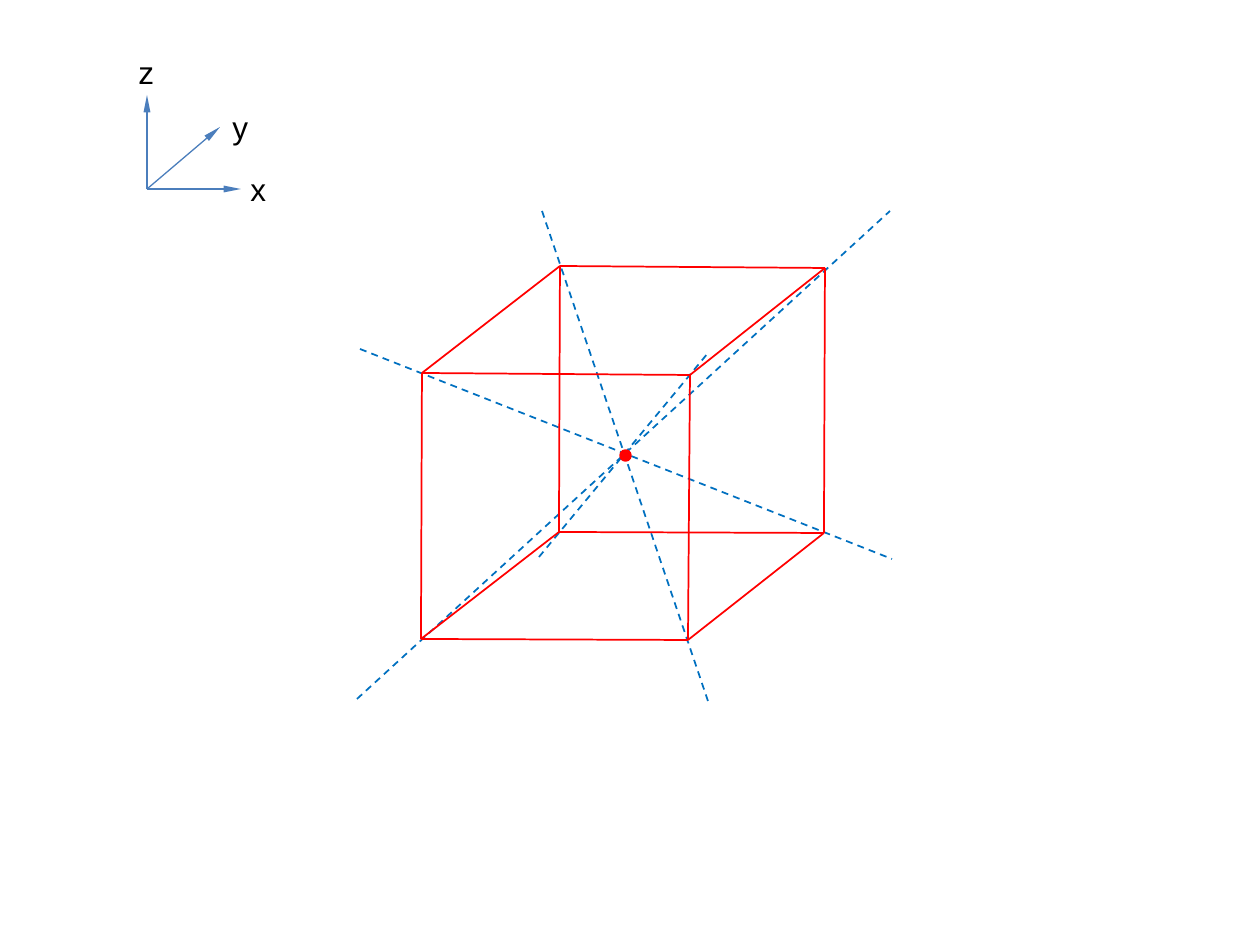
from lxml import etree
from pptx import Presentation
from pptx.dml.color import RGBColor
from pptx.enum.dml import MSO_LINE
from pptx.enum.shapes import MSO_CONNECTOR, MSO_SHAPE
from pptx.enum.text import MSO_AUTO_SIZE
from pptx.oxml.ns import qn
from pptx.util import Pt

STRAIGHT = MSO_CONNECTOR.STRAIGHT
OVAL = MSO_SHAPE.OVAL
DASH = MSO_LINE.DASH
FIT_SHAPE = MSO_AUTO_SIZE.SHAPE_TO_FIT_TEXT
RED, BLUE, AXIS_BLUE, BLACK = "FF0000", "0070C0", "4B7EBC", "000000"


def px(value):
    return round(value * 914400 / 126)


def add_line(start, end, color, width):
    connector = slide.shapes.add_connector(STRAIGHT, *map(px, start + end))
    connector.line.color.rgb = RGBColor.from_string(color)
    connector.line.width = Pt(width)
    etree.SubElement(connector._element.spPr, qn("a:effectLst"))
    return connector


presentation = Presentation()
presentation.slide_width = px(1260)
presentation.slide_height = px(945)
slide = presentation.slides.add_slide(presentation.slide_layouts[6])

diagonals = [
    ((357, 699), (890, 211)),
    ((542, 211), (708, 701)),
    ((539, 557), (708, 353)),
    ((360, 349), (892, 559)),
]
for start, end in diagonals:
    add_line(start, end, BLUE, 1).line.dash_style = DASH

front = [(422, 373), (690, 375), (688, 640), (421, 639)]
back = [(560, 266), (825, 268), (824, 533), (559, 532)]
for index in range(4):
    following = (index + 1) % 4
    add_line(front[index], front[following], RED, 1)
    add_line(back[index], back[following], RED, 1)
    add_line(front[index], back[index], RED, 1)

center = slide.shapes.add_shape(OVAL, px(621), px(451), px(9), px(9))
center.shadow.inherit = False
center.fill.solid()
center.fill.fore_color.rgb = RGBColor.from_string(RED)
center.line.color.rgb = RGBColor.from_string(RED)
center.line.width = Pt(2)

axis_origin = (147, 189)
axes = [
    ("x", (241, 189), (238, 164)),
    ("y", (220, 127), (220, 102)),
    ("z", (147, 95), (126, 47)),
]
for name, tip, (left, top) in axes:
    axis = add_line(axis_origin, tip, AXIS_BLUE, 0.75)
    etree.SubElement(axis.line._get_or_add_ln(), qn("a:tailEnd"), type="triangle", w="sm", len="lg")
    label = slide.shapes.add_textbox(px(left), px(top), px(32), px(50))
    text_frame = label.text_frame
    text_frame.word_wrap = True
    text_frame.auto_size = FIT_SHAPE
    text_frame.text = name
    font = text_frame.paragraphs[0].runs[0].font
    font.name = "Arial"
    font.size = Pt(18)
    font.color.rgb = RGBColor.from_string(BLACK)

presentation.save("out.pptx")
